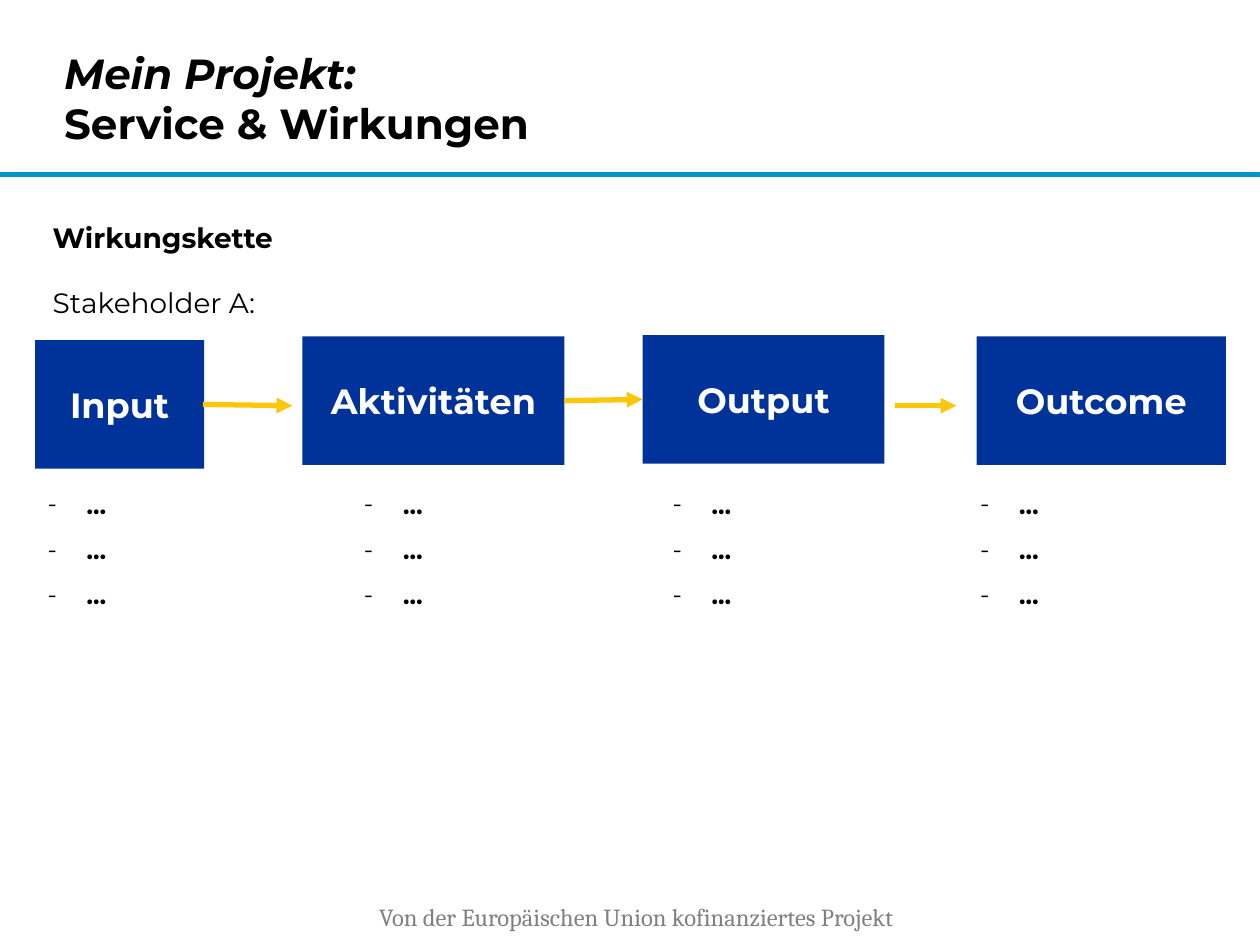
from lxml.etree import SubElement
from pptx import Presentation
from pptx.dml.color import RGBColor
from pptx.enum.shapes import MSO_CONNECTOR, MSO_SHAPE
from pptx.enum.text import MSO_ANCHOR, PP_ALIGN
from pptx.oxml.ns import qn
from pptx.util import Inches, Pt

COLORS = {
    "text": "000000",
    "footer": "808080",
    "white": "FFFFFF",
    "box": "003399",
    "arrow": "FDC608",
    "rule": "0C94B7",
    "rule_edge": "0096D3",
}
STAGES = [
    ("Input", 0.28, 2.7, 1.34),
    ("Aktivitäten", 2.4, 2.67, 2.08),
    ("Output", 5.1, 2.66, 1.92),
    ("Outcome", 7.75, 2.67, 1.98),
]
ARROWS = [
    (1.61, 3.21, 2.32, 3.22),
    (4.48, 3.18, 5.1, 3.17),
    (7.1, 3.22, 7.59, 3.22),
]
LIST_LEFTS = [0.28, 2.79, 5.24, 7.68]


def rgb(name):
    return RGBColor.from_string(COLORS[name])


def style(r, size, color="text", bold=False, italic=False, font="Montserrat"):
    r.font.name = font
    r.font.size = Pt(size)
    r.font.bold = bold
    r.font.italic = italic
    r.font.color.rgb = rgb(color)


def add_text_frame(s, left, top, width, height, wrap=True):
    box = s.shapes.add_textbox(Inches(left), Inches(top), Inches(width), Inches(height))
    tf = box.text_frame
    tf.word_wrap = wrap
    return tf


def add_rect(s, left, top, width, height, fill):
    sp = s.shapes.add_shape(
        MSO_SHAPE.RECTANGLE, Inches(left), Inches(top), Inches(width), Inches(height)
    )
    sp.shadow.inherit = False
    sp.fill.solid()
    sp.fill.fore_color.rgb = rgb(fill)
    sp.line.fill.background()
    return sp


def add_rule(s):
    sp = add_rect(s, 0, 1.37, 10, 0.03, "rule")
    sp.line.color.rgb = rgb("rule_edge")
    sp.line.width = Pt(1)


def add_title(s):
    tf = add_text_frame(s, 0.51, 0.18, 7.27, 1.19)
    tf.margin_left = tf.margin_right = tf.margin_top = tf.margin_bottom = 0
    tf.vertical_anchor = MSO_ANCHOR.MIDDLE
    p = tf.paragraphs[0]
    p.text = "Mein Projekt: \vService & Wirkungen"
    for r, italic in zip(p.runs, (True, False)):
        style(r, 24, bold=True, italic=italic)


def add_heading(s):
    tf = add_text_frame(s, 0.32, 1.7, 2.09, 0.89, wrap=False)
    tf.text = "Wirkungskette\nStakeholder A:"
    for p, bold in zip(tf.paragraphs, (True, False)):
        style(p.runs[0], 16, bold=bold)
    tf.paragraphs[1].space_before = Pt(18)


def add_stage(s, label, left, top, width):
    tf = add_rect(s, left, top, width, 1.02, "box").text_frame
    tf.word_wrap = True
    tf.vertical_anchor = MSO_ANCHOR.MIDDLE
    tf.text = label
    p = tf.paragraphs[0]
    p.alignment = PP_ALIGN.CENTER
    style(p.runs[0], 20, "white", bold=True)


def add_arrow(s, x1, y1, x2, y2):
    line = s.shapes.add_connector(
        MSO_CONNECTOR.STRAIGHT, Inches(x1), Inches(y1), Inches(x2), Inches(y2)
    )
    line.line.color.rgb = rgb("arrow")
    line.line.width = Pt(3)
    SubElement(line.line._get_or_add_ln(), qn("a:tailEnd"), type="triangle")
    SubElement(line._element.spPr, qn("a:effectLst"))


def add_dash_list(s, left):
    tf = add_text_frame(s, left, 3.82, 2.05, 1.07)
    tf.text = "\n".join(["…"] * 3)
    for p in tf.paragraphs:
        pPr = p._p.get_or_add_pPr()
        pPr.set("marL", str(Inches(0.31)))
        pPr.set("indent", str(-Inches(0.31)))
        SubElement(pPr, qn("a:buFont"), typeface="Montserrat")
        SubElement(pPr, qn("a:buChar"), char="-")
        p.line_spacing = 1.07
        p.space_after = Pt(8)
        style(p.runs[0], 14, bold=True)


def add_footer(s):
    tf = add_text_frame(s, 2.91, 7.11, 4.61, 0.34)
    tf.text = "Von der Europäischen Union kofinanziertes Projekt"
    style(tf.paragraphs[0].runs[0], 14, "footer", font="Cambria")


def main():
    prs = Presentation()
    prs.slide_width = Inches(10)
    prs.slide_height = Inches(7.5)
    s = prs.slides.add_slide(prs.slide_layouts[6])
    add_rule(s)
    add_footer(s)
    add_title(s)
    add_heading(s)
    for stage in STAGES:
        add_stage(s, *stage)
    for arrow in ARROWS:
        add_arrow(s, *arrow)
    for left in LIST_LEFTS:
        add_dash_list(s, left)
    prs.save("out.pptx")


if __name__ == "__main__":
    main()
